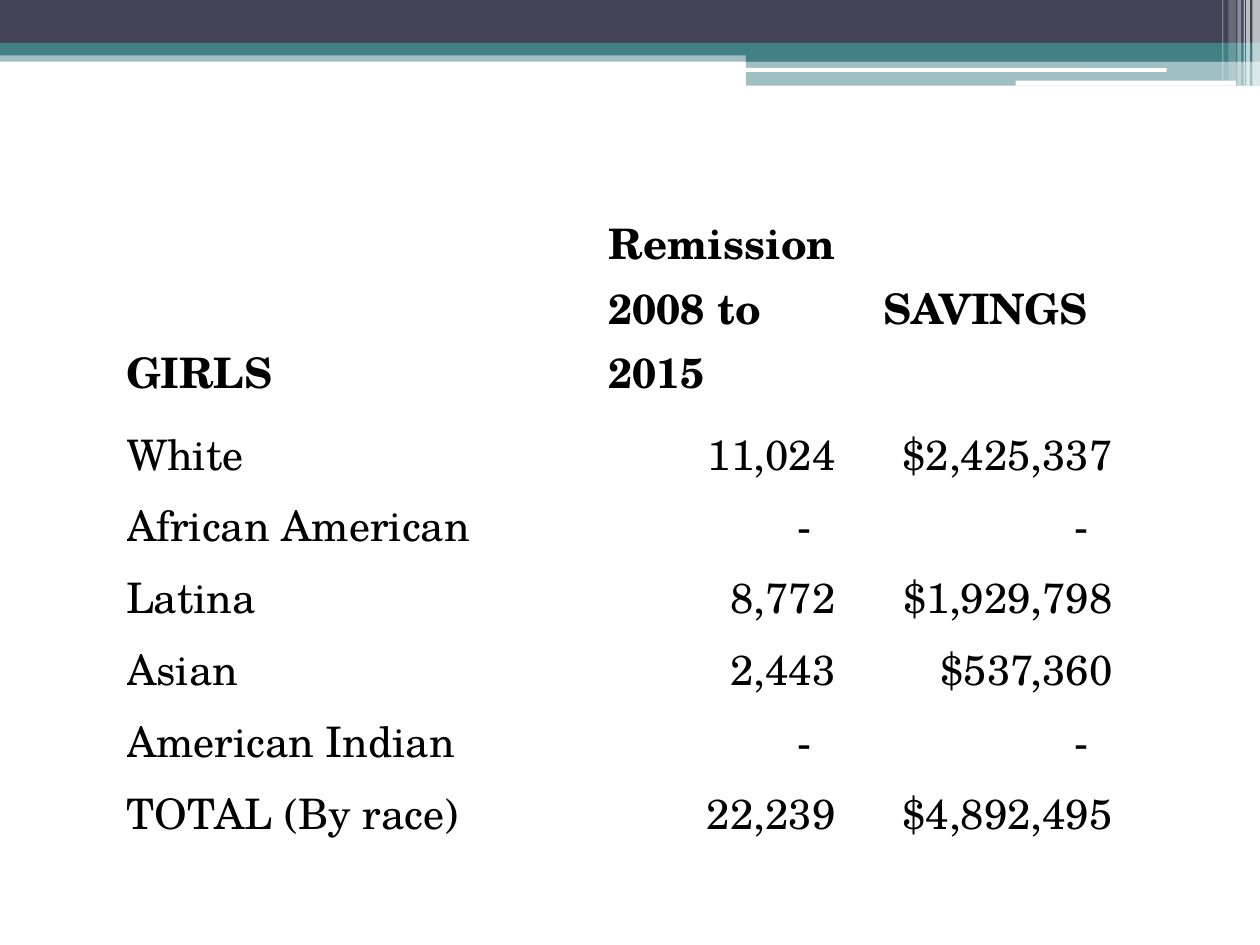
from lxml import etree
from pptx import Presentation
from pptx.dml.color import RGBColor
from pptx.enum.shapes import MSO_SHAPE
from pptx.enum.text import MSO_ANCHOR, PP_ALIGN
from pptx.oxml.ns import qn
from pptx.util import Inches, Pt

RECTANGLE = MSO_SHAPE.RECTANGLE
ROUNDED = MSO_SHAPE.ROUNDED_RECTANGLE
MIDDLE, BOTTOM = MSO_ANCHOR.MIDDLE, MSO_ANCHOR.BOTTOM
LEFT, CENTER, RIGHT = PP_ALIGN.LEFT, PP_ALIGN.CENTER, PP_ALIGN.RIGHT

COLORS = {"navy": "424456", "teal": "438086", "white": "FFFFFF", "text": "000000"}
FONT = "TeX Gyre Schola"
GRID_COLUMNS, GRID_ROWS = 1000, 750
BANNER_BOX = (0, 0, 1000, 68)
TABLE_BOX = (100, 158, 792, 514)

BANDS = [
    (0, 40, 1000, 9, "teal", 50, RECTANGLE),
    (0, 0, 1000, 34, "navy", 100, RECTANGLE),
    (0, 34, 1000, 10, "teal", 100, RECTANGLE),
    (592, 39, 408, 10, "teal", 100, RECTANGLE),
    (592, 48, 408, 20, "teal", 50, RECTANGLE),
    (591, 54, 335, 3, "white", 100, ROUNDED),
    (806, 64, 175, 4, "white", 100, ROUNDED),
]
STRIPES = [
    (994, 6, 68, 65),
    (989, 3, 68, 65),
    (987, 1, 68, 60),
    (982, 3, 68, 40),
    (975, 6, 64, 20),
    (970, 1, 64, 30),
]

HEADINGS = ["GIRLS", "Remission 2008 to 2015", "SAVINGS"]
RECORDS = [
    ("White", "11,024", "$2,425,337"),
    ("African American", "-", "-"),
    ("Latina", "8,772", "$1,929,798"),
    ("Asian", "2,443", "$537,360"),
    ("American Indian", "-", "-"),
    ("TOTAL (By race)", "22,239", "$4,892,495"),
]
COLUMN_WIDTHS = [383, 189, 220]
HEADING_HEIGHT = 172
NUMBER_MARGIN, DASH_MARGIN, HEADING_MARGIN = 0.09, 0.28, 0.09


def add_band(page, cell, left, top, width, height, color, opacity, kind):
    """Add one flat band, measured in grid cells, with the given opacity."""
    across, down = cell
    band = page.shapes.add_shape(
        kind, left * across, top * down, width * across, height * down
    )
    band.shadow.inherit = False
    band.line.fill.background()
    band.fill.solid()
    band.fill.fore_color.rgb = RGBColor.from_string(COLORS[color])
    if opacity < 100:
        tint = band.fill._xPr.find(qn("a:solidFill"))[0]
        etree.SubElement(tint, qn("a:alpha")).set("val", str(opacity * 1000))


def add_banner(page, cell, box):
    """Draw the layered bands and the pale stripes at the right end."""
    left, top, _, _ = box
    stripes = [(x, 0, width, height, "white", opacity, RECTANGLE)
               for x, width, height, opacity in STRIPES]
    for x, y, *look in BANDS + stripes:
        add_band(page, cell, left + x, top + y, *look)


def fill_cell(cell, text, align, bold=False, anchor=MIDDLE, right=0, bottom=0):
    """Write one table cell without fill."""
    cell.fill.background()
    cell.margin_left = cell.margin_top = 0
    cell.margin_right, cell.margin_bottom = Inches(right), Inches(bottom)
    cell.vertical_anchor = anchor
    para = cell.text_frame.paragraphs[0]
    para.alignment = align
    para.line_spacing = Pt(36.9)
    span = para.add_run()
    span.text = text
    span.font.name, span.font.size, span.font.bold = FONT, Pt(24), bold
    span.font.color.rgb = RGBColor.from_string(COLORS["text"])


def add_savings_table(page, cell, box):
    """Place the table of remissions and savings by race in its box."""
    across, down = cell
    left, top, width, height = box
    table = page.shapes.add_table(
        len(RECORDS) + 1, len(HEADINGS),
        left * across, top * down, width * across, height * down,
    ).table
    table.first_row = table.horz_banding = False
    for column, share in zip(table.columns, COLUMN_WIDTHS):
        column.width = share * across
    record_height = (height - HEADING_HEIGHT) * down // len(RECORDS)
    for index, row in enumerate(table.rows):
        row.height = record_height if index else HEADING_HEIGHT * down

    girls, remission, savings = HEADINGS
    fill_cell(table.cell(0, 0), girls, LEFT, True, BOTTOM, bottom=HEADING_MARGIN)
    fill_cell(table.cell(0, 1), remission, LEFT, True)
    fill_cell(table.cell(0, 2), savings, CENTER, True)
    for row, (race, *numbers) in enumerate(RECORDS, start=1):
        fill_cell(table.cell(row, 0), race, LEFT)
        for column, number in enumerate(numbers, start=1):
            margin = DASH_MARGIN if number == "-" else NUMBER_MARGIN
            fill_cell(table.cell(row, column), number, RIGHT, right=margin)


def main():
    """Build the one-page deck and save it."""
    deck = Presentation()
    deck.slide_width, deck.slide_height = Inches(10), Inches(7.5)
    cell = (deck.slide_width // GRID_COLUMNS, deck.slide_height // GRID_ROWS)
    page = deck.slides.add_slide(deck.slide_layouts[6])
    add_banner(page, cell, BANNER_BOX)
    add_savings_table(page, cell, TABLE_BOX)
    deck.save("out.pptx")


if __name__ == "__main__":
    main()
